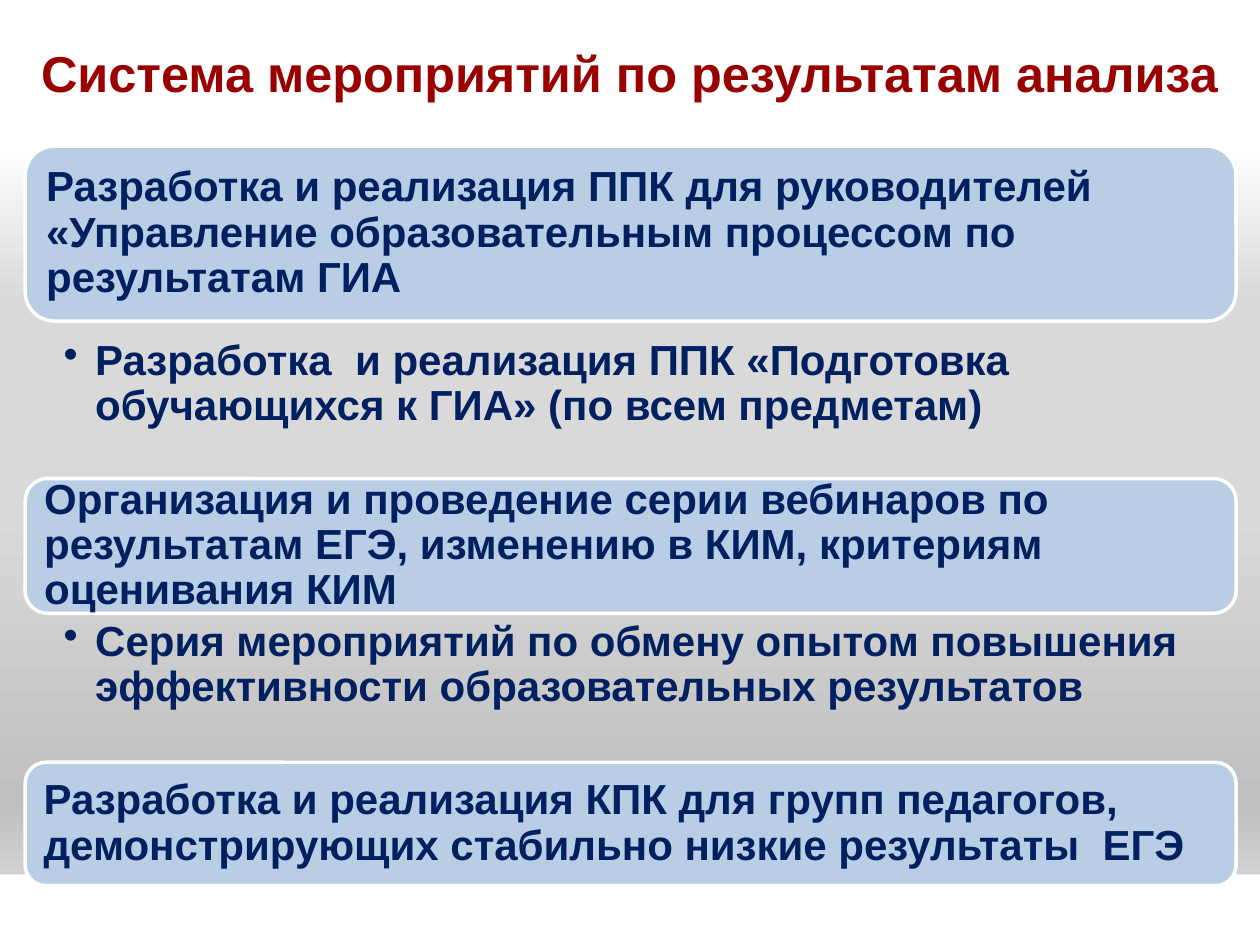
"""Build the slide listing measures that follow from the exam results analysis."""
import lxml.etree
import pptx
import pptx.dml.color
import pptx.enum.shapes
import pptx.enum.text
import pptx.oxml
import pptx.oxml.ns
import pptx.util

Pt = pptx.util.Pt
ANCHOR = pptx.enum.text.MSO_ANCHOR
ALIGN = pptx.enum.text.PP_ALIGN
SHAPE = pptx.enum.shapes.MSO_SHAPE


def color(value):
    return pptx.dml.color.RGBColor.from_string(value)


def write(frame, text, size, hue, frame_format, paragraph_format, bullet=None):
    for name, value in frame_format.items():
        setattr(frame, name, value)
    paragraph = frame.paragraphs[0]
    paragraph.text = text
    for name, value in paragraph_format.items():
        setattr(paragraph, name, value)
    if bullet:
        properties = paragraph._p.get_or_add_pPr()
        properties.set("marL", str(Pt(18)))
        properties.set("indent", str(-Pt(18)))
        mark = lxml.etree.SubElement(properties, pptx.oxml.ns.qn("a:buChar"))
        mark.set("char", bullet)
    font = paragraph.runs[0].font
    for name, value in {"name": "Arial", "size": Pt(size), "bold": True}.items():
        setattr(font, name, value)
    font.color.rgb = color(hue)


deck = pptx.Presentation()
deck.slide_width, deck.slide_height = Pt(720), Pt(540)
slide = deck.slides.add_slide(deck.slide_layouts[6])

backdrop = slide.background.fill
backdrop.gradient()
backdrop.gradient_angle = 270
stops = backdrop._fill._gradFill.find(pptx.oxml.ns.qn("a:gsLst"))
for stop in list(stops):
    stops.remove(stop)
for position, hue in [(0, "FFFFFF"), (15, "FFFFFF"), (32, "D9D9D9"),
                      (54, "D9D9D9"), (85, "BFBFBF"), (100, "E6E6E6")]:
    stop = lxml.etree.SubElement(stops, pptx.oxml.ns.qn("a:gs"), pos=str(position * 1000))
    lxml.etree.SubElement(stop, pptx.oxml.ns.qn("a:srgbClr"), val=hue)

footer = slide.shapes.add_shape(SHAPE.RECTANGLE, 0, Pt(499.7), Pt(720), Pt(40.3))
heading = slide.shapes.add_shape(SHAPE.RECTANGLE, 0, 0, Pt(720), Pt(82.8))
for band in (footer, heading):
    band.shadow.inherit = False
    band.fill.solid()
    band.fill.fore_color.rgb = color("FFFFFF")
    band.line.fill.background()
write(heading.text_frame, "Система мероприятий по результатам анализа", 28.8, "990000",
      {"word_wrap": True, "vertical_anchor": ANCHOR.MIDDLE}, {"alignment": ALIGN.CENTER})

left, width = Pt(14.4), Pt(691.9)
measure_format = {"alignment": ALIGN.LEFT, "line_spacing": 0.9}
card_format = {"word_wrap": True, "vertical_anchor": ANCHOR.MIDDLE,
               "margin_left": Pt(7.2), "margin_right": Pt(7.2),
               "margin_top": Pt(7.2), "margin_bottom": Pt(7.2)}
detail_format = {"word_wrap": True, "vertical_anchor": ANCHOR.TOP,
                 "margin_left": Pt(22), "margin_right": Pt(13.7),
                 "margin_top": Pt(2.4), "margin_bottom": Pt(2.4)}

measures = [
    (83.5, 100, "Разработка и реализация ППК для руководителей «Управление "
     "образовательным процессом по результатам ГИА"),
    (273.5, 77, "Организация и проведение серии вебинаров по результатам ЕГЭ, "
     "изменению в КИМ, критериям оценивания КИМ"),
    (435.6, 70.5, "Разработка и реализация КПК для групп педагогов, "
     "демонстрирующих стабильно низкие результаты  ЕГЭ"),
]
for top, height, text in measures:
    card = slide.shapes.add_shape(SHAPE.ROUNDED_RECTANGLE, left, Pt(top), width, Pt(height))
    card.shadow.inherit = False
    card.fill.solid()
    card.fill.fore_color.rgb = color("B9CDE5")
    card.line.color.rgb = color("FFFFFF")
    card.line.width = Pt(2)
    write(card.text_frame, text, 24, "002060", card_format, measure_format)

details = [
    (191.5, "Разработка  и реализация ППК «Подготовка обучающихся к ГИА» (по всем предметам)"),
    (352, "Серия мероприятий по обмену опытом повышения эффективности "
     "образовательных результатов"),
]
for top, text in details:
    detail = slide.shapes.add_textbox(left, Pt(top), width, Pt(83.5))
    write(detail.text_frame, text, 24, "002060", detail_format, measure_format, "•")

deck.save("out.pptx")
